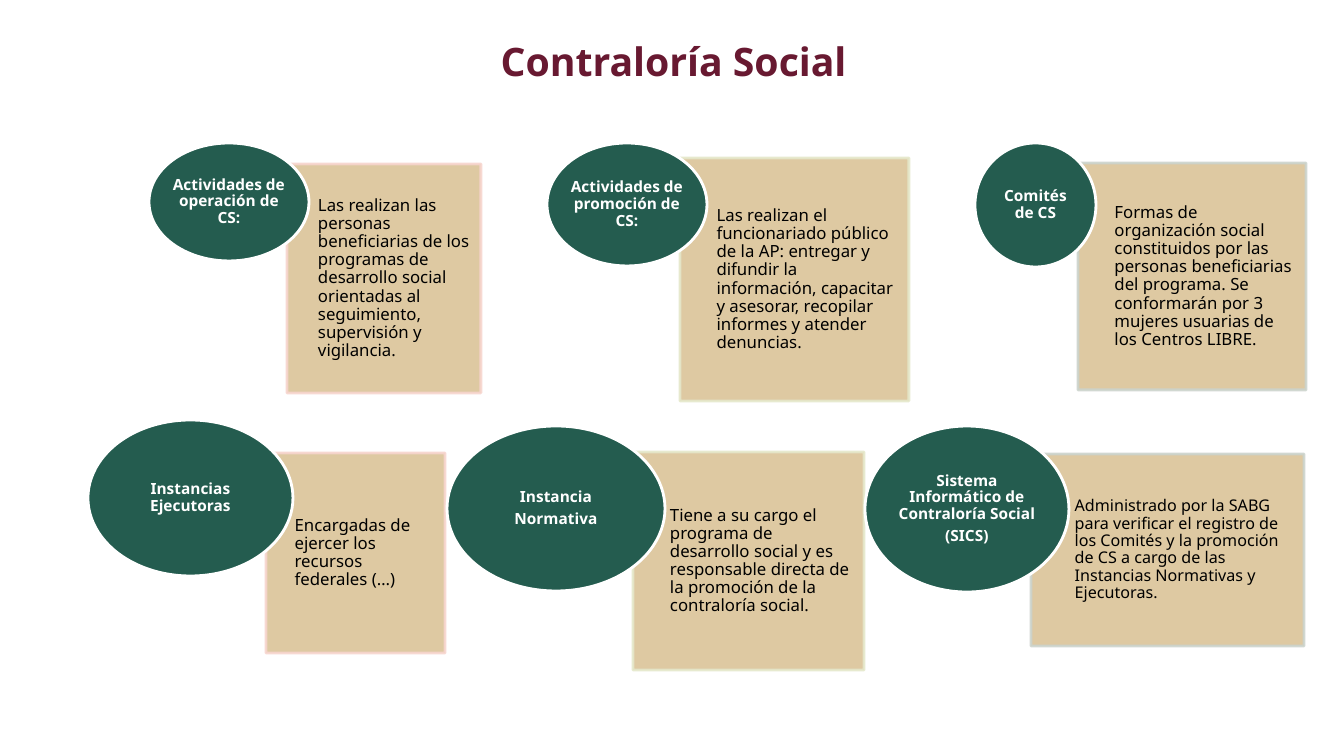
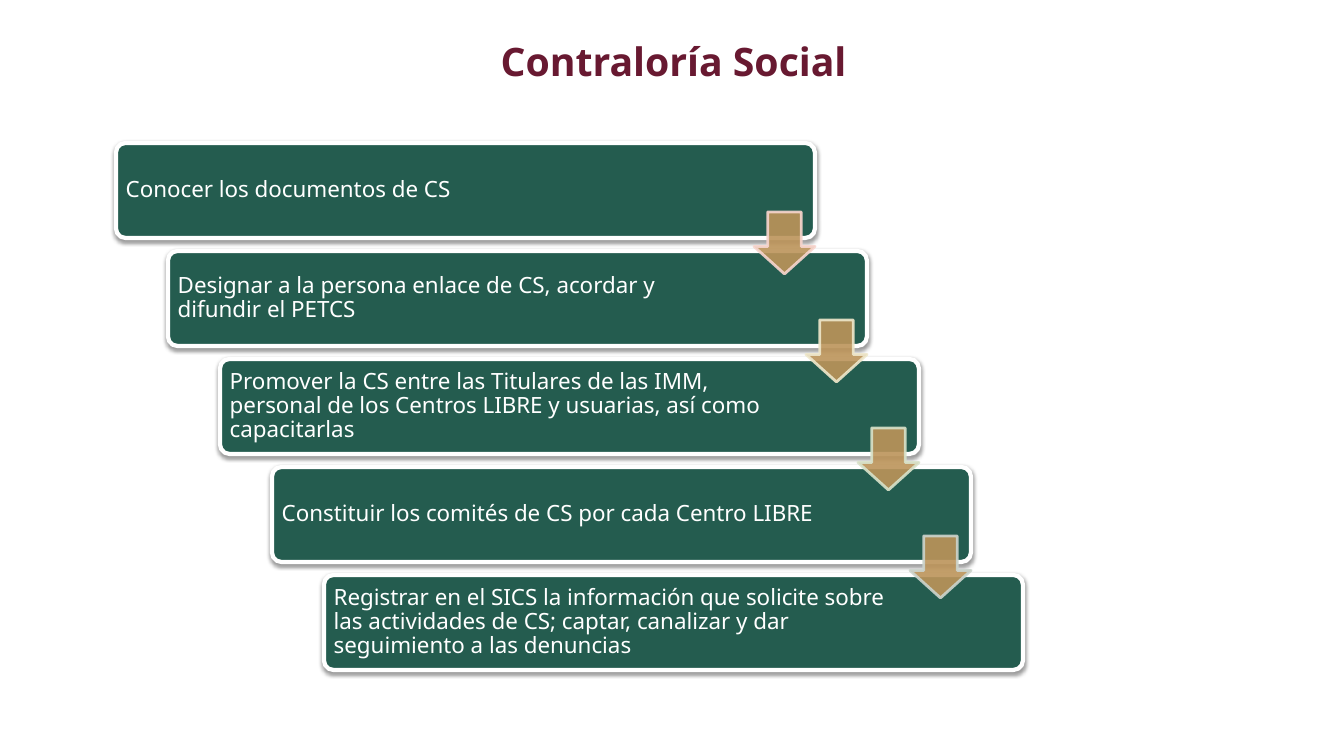
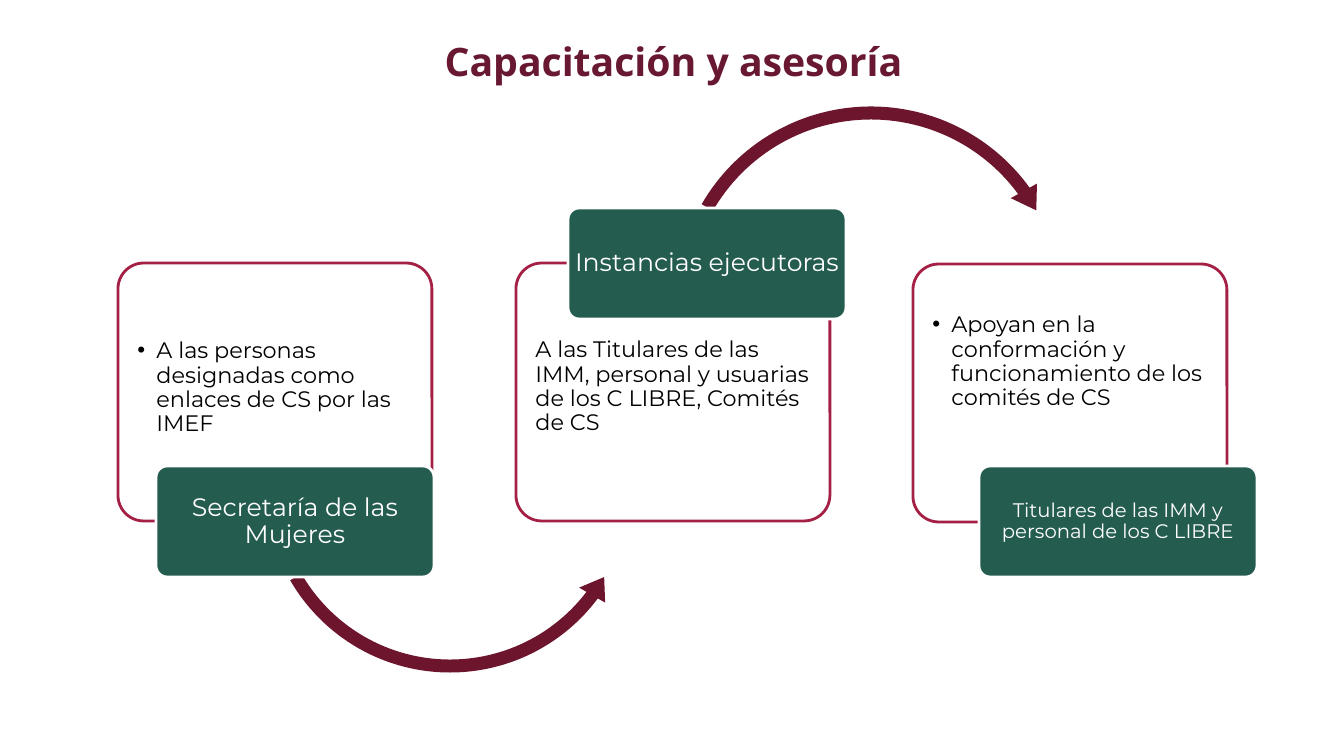
from lxml.etree import SubElement
from pptx import Presentation
from pptx.dml.color import RGBColor
from pptx.enum.shapes import MSO_SHAPE
from pptx.enum.text import MSO_ANCHOR, MSO_AUTO_SIZE, PP_ALIGN
from pptx.oxml.ns import qn
from pptx.util import Emu, Pt

SLIDE_WIDTH, SLIDE_HEIGHT = 1344, 756
EMU_PER_PX = 12192000 / SLIDE_WIDTH
SANS, DISPLAY = "Noto Sans", "Montserrat"
WHITE, BLACK = "FFFFFF", "000000"
GREEN, SAND, GOLD = "245C4F", "DEC9A2", "BC945A"
TITLE_COLOR, WINE, CRIMSON = "681931", "6E152E", "A42145"
PINK, LIME, CREAM, MINT, MIST = "F7D5CE", "E5E8CA", "EEE7CB", "D8E2CA", "CCD4CD"

CONCEPTS = [
    (["Actividades de operación de CS:"], (149, 143, 160, 118),
     "Las realizan las personas beneficiarias de los programas de desarrollo social "
     "orientadas al seguimiento, supervisión y vigilancia.",
     (287, 164, 194, 229), PINK, 12),
    (["Actividades de promoción de CS:"], (547, 143, 160, 123),
     "Las realizan el funcionariado público de la AP: entregar y difundir la información, "
     "capacitar y asesorar, recopilar informes y atender denuncias.",
     (680, 158, 229, 243), LIME, 12),
    (["Comités de CS"], (975, 143, 121, 124),
     "Formas de organización social constituidos por las personas beneficiarias del programa. "
     "Se conformarán por 3 mujeres usuarias de los Centros LIBRE.",
     (1078, 163, 228, 227), MIST, 12),
    (["Instancias Ejecutoras"], (88, 420, 205, 156),
     "Encargadas de ejercer los recursos federales (…)",
     (266, 453, 179, 200), PINK, 12),
    (["Instancia", "Normativa"], (447, 426, 218, 165),
     "Tiene a su cargo el programa de desarrollo social y es responsable directa de la "
     "promoción de la contraloría social.",
     (633, 452, 231, 218), LIME, 12),
    (["Sistema Informático de Contraloría Social", "(SICS)"], (865, 426, 204, 166),
     "Administrado por la SABG para verificar el registro de los Comités y la promoción de CS "
     "a cargo de las Instancias Normativas y Ejecutoras.",
     (1031, 454, 273, 192), MIST, 11.5),
]

STEPS = [
    "Conocer los documentos de CS",
    "Designar a la persona enlace de CS, acordar y difundir el PETCS",
    "Promover la CS entre las Titulares de las IMM, personal de los Centros LIBRE y usuarias, "
    "así como capacitarlas",
    "Constituir los comités de CS por cada Centro LIBRE",
    "Registrar en el SICS la información que solicite sobre las actividades de CS; captar, "
    "canalizar y dar seguimiento a las denuncias",
]


def px(length):
    """Turn pixels into EMU."""
    return Emu(round(length * EMU_PER_PX))


def rgb(color):
    """Turn a hex string into a colour."""
    return RGBColor.from_string(color)


def set_alpha(element, percent):
    """Make every colour inside an element partly transparent."""
    for color in element.iter(qn("a:srgbClr")):
        SubElement(color, qn("a:alpha"), val=str(percent * 1000))


def add_box(slide, kind, box, fill, line=None, line_width=2, adjustments=()):
    """Add a preset shape with its fill, outline and adjustments."""
    shape = slide.shapes.add_shape(kind, *map(px, box))
    shape.shadow.inherit = False
    shape.fill.solid()
    shape.fill.fore_color.rgb = rgb(fill)
    if line:
        shape.line.color.rgb = rgb(line)
        shape.line.width = Pt(line_width)
    else:
        shape.line.fill.background()
    for index, value in enumerate(adjustments):
        shape.adjustments[index] = value
    return shape


def add_shadow(shape):
    """Add a soft shadow below a shape."""
    effects = shape.element.spPr.find(qn("a:effectLst"))
    shadow = SubElement(effects, qn("a:outerShdw"), blurRad=str(Pt(3)), dist=str(Pt(1.6)),
                        dir="5400000", algn="ctr", rotWithShape="0")
    SubElement(shadow, qn("a:srgbClr"), val=BLACK)
    set_alpha(shadow, 38)


def add_bullet(paragraph):
    """Give a paragraph a round bullet and a hanging indent."""
    properties = paragraph._p.get_or_add_pPr()
    properties.set("marL", str(px(19)))
    properties.set("indent", str(px(-19)))
    color = SubElement(properties, qn("a:buClr"))
    SubElement(color, qn("a:srgbClr"), val=BLACK)
    SubElement(properties, qn("a:buFont"), typeface="Arial")
    SubElement(properties, qn("a:buChar"), char="•")


def set_text(shape, texts, size, color, font=SANS, bold=False, align=PP_ALIGN.LEFT,
             anchor=MSO_ANCHOR.MIDDLE, margins=(0, 0, 0, 0), spacing=0.9, bullet=False):
    """Write paragraphs into a shape; margins are left, top, right, bottom."""
    frame = shape.text_frame
    frame.word_wrap = True
    frame.auto_size = MSO_AUTO_SIZE.NONE
    frame.vertical_anchor = anchor
    (frame.margin_left, frame.margin_top,
     frame.margin_right, frame.margin_bottom) = map(px, margins)
    for index, text in enumerate(texts):
        paragraph = frame.add_paragraph() if index else frame.paragraphs[0]
        paragraph.text = text
        if bullet:
            add_bullet(paragraph)
        paragraph.alignment = align
        paragraph.line_spacing = spacing
        paragraph.space_before = Pt(4 if index else 0)
        paragraph.font.name = font
        paragraph.font.size = Pt(size)
        paragraph.font.bold = bold
        paragraph.font.color.rgb = rgb(color)


def add_titled_slide(presentation, text):
    """Add a slide with the shared title style."""
    slide = presentation.slides.add_slide(presentation.slide_layouts[5])
    title = slide.shapes.title
    title.left, title.top, title.width, title.height = map(px, (277, 24, 793, 73))
    set_text(title, [text], 28, TITLE_COLOR, bold=True, align=PP_ALIGN.CENTER,
             margins=(10, 5, 10, 5), spacing=1.0)
    return slide


def add_concept(slide, labels, oval_box, description, card_box, outline, size):
    """Add a sand card with its green oval label."""
    card = add_box(slide, MSO_SHAPE.RECTANGLE, card_box, SAND, outline)
    set_alpha(card.element.spPr.find(qn("a:ln")), 90)
    set_text(card, [description], size, BLACK, margins=(card_box[2] * 0.16, 9, 9, 9))
    oval = add_box(slide, MSO_SHAPE.OVAL, oval_box, GREEN, WHITE)
    set_text(oval, labels, 11, WHITE, bold=True, align=PP_ALIGN.CENTER)


def add_staircase(slide):
    """Add the descending steps and the arrows between them."""
    left, top, step_x, step_y = 116, 143, 52, 108
    for index, text in enumerate(STEPS):
        box = (left + index * step_x, top + index * step_y, 699, 95)
        step = add_box(slide, MSO_SHAPE.ROUNDED_RECTANGLE, box, GREEN, WHITE, 3, [0.1])
        add_shadow(step)
        set_text(step, [text], 16, WHITE, margins=(7, 7, 120, 7))
    for index, outline in enumerate((PINK, CREAM, MINT, MIST)):
        box = (754 + index * step_x, 212 + index * step_y, 61, 62)
        arrow = add_box(slide, MSO_SHAPE.DOWN_ARROW, box, GOLD, outline, 2, [0.55, 0.45])
        set_alpha(arrow.element.spPr, 90)


def add_stage_card(slide, left, top, text, text_top, bullet):
    """Add an outlined card with its text."""
    card = add_box(slide, MSO_SHAPE.ROUNDED_RECTANGLE, (left, top, 314, 258), WHITE, CRIMSON,
                   2, [0.1])
    set_text(card, [text], 16, BLACK, DISPLAY, anchor=MSO_ANCHOR.TOP,
             margins=(12, text_top, 8, 0), bullet=bullet)


def add_stage_label(slide, left, top, text, size):
    """Add the green label of a card."""
    label = add_box(slide, MSO_SHAPE.ROUNDED_RECTANGLE, (left, top, 278, 111), GREEN, WHITE,
                    2, [0.1])
    set_text(label, [text], size, WHITE, DISPLAY, align=PP_ALIGN.CENTER, margins=(2, 2, 2, 2))


def add_arc_arrow(slide, kind, left, top, size, head_angle, tail_angle):
    """Add a curved arrow; angles are in degrees."""
    thickness, head, degree = 13, 15, 0.6
    add_box(slide, kind, (left, top, size, size), WINE,
            adjustments=[thickness / size, 7 * degree, head_angle * degree,
                         tail_angle * degree, head / size])


def main():
    """Build and save the presentation."""
    presentation = Presentation()
    presentation.slide_width, presentation.slide_height = px(SLIDE_WIDTH), px(SLIDE_HEIGHT)

    slide = add_titled_slide(presentation, "Contraloría Social")
    for concept in CONCEPTS:
        add_concept(slide, *concept)

    slide = add_titled_slide(presentation, "Contraloría Social")
    add_staircase(slide)

    slide = add_titled_slide(presentation, "Capacitación y asesoría")
    add_stage_card(slide, 118, 263,
                   "A las personas designadas como enlaces de CS por las IMEF", 69, True)
    add_arc_arrow(slide, MSO_SHAPE.LEFT_CIRCULAR_ARROW, 257, 295, 386, 37, 150)
    add_stage_label(slide, 156, 466, "Secretaría de las Mujeres", 18)
    add_stage_card(slide, 516, 263,
                   "A las Titulares de las IMM, personal y usuarias de los C LIBRE, "
                   "Comités de CS", 68, False)
    add_arc_arrow(slide, MSO_SHAPE.CIRCULAR_ARROW, 667, 98, 408, 324, 210)
    add_stage_label(slide, 568, 208, "Instancias ejecutoras", 18)
    add_stage_card(slide, 913, 264,
                   "Apoyan en la conformación y funcionamiento de los comités de CS", 42, True)
    add_stage_label(slide, 979, 466, "Titulares de las IMM y personal de los C LIBRE", 14)

    presentation.save("out.pptx")


if __name__ == "__main__":
    main()
